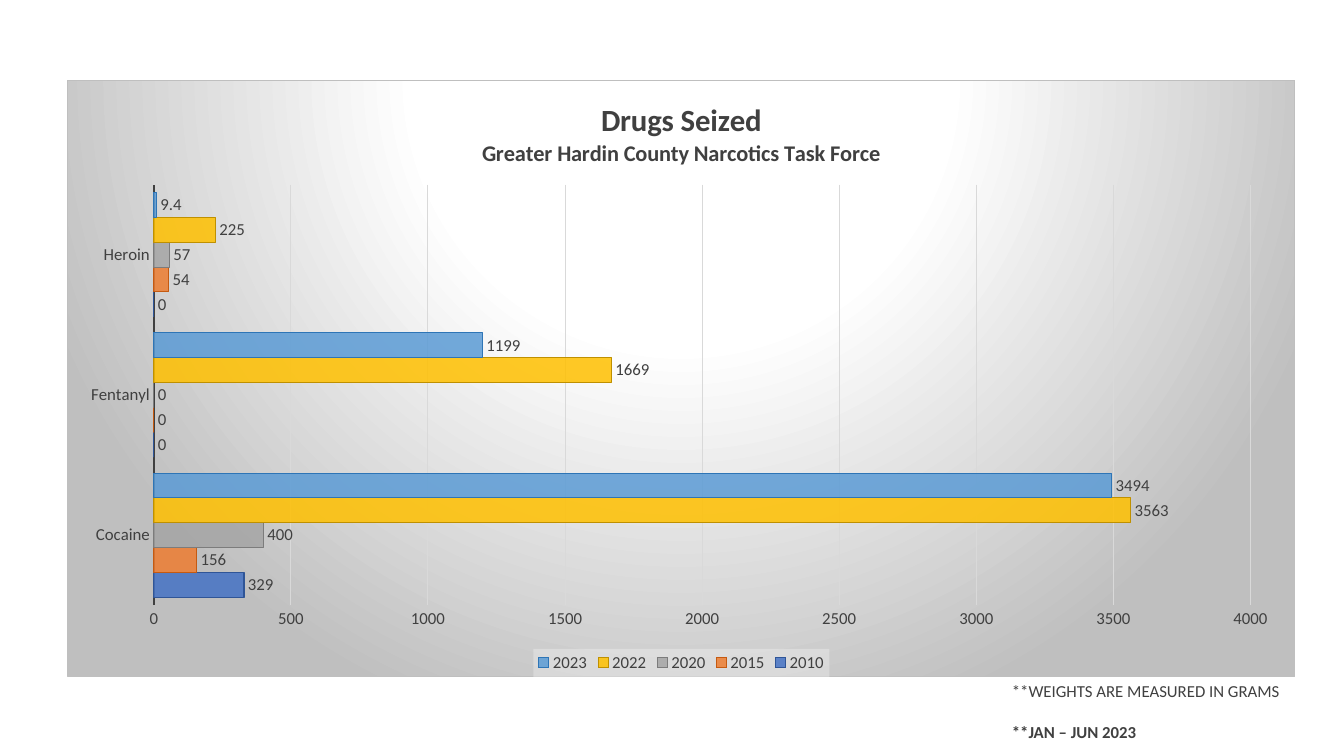
from lxml.etree import fromstring
from pptx import Presentation
from pptx.chart.data import CategoryChartData
from pptx.dml.color import RGBColor
from pptx.enum.chart import XL_CHART_TYPE, XL_LABEL_POSITION, XL_LEGEND_POSITION, XL_TICK_MARK
from pptx.enum.text import MSO_AUTO_SIZE
from pptx.oxml import parse_xml
from pptx.oxml.ns import nsdecls
from pptx.util import Cm, Pt

INK = RGBColor(0x40, 0x40, 0x40)
GRID = RGBColor(0xD9, 0xD9, 0xD9)

DRUGS = ["Cocaine", "Fentanyl", "Heroin"]
# Year, grams seized, bar fill, bar outline
YEARS = [
    ("2010", (329, 0, 0), RGBColor(0x44, 0x72, 0xC4), RGBColor(0x2F, 0x55, 0x97)),
    ("2015", (156, 0, 54), RGBColor(0xED, 0x7D, 0x31), RGBColor(0xC5, 0x5A, 0x11)),
    ("2020", (400, 0, 57), RGBColor(0xA5, 0xA5, 0xA5), RGBColor(0x7C, 0x7C, 0x7C)),
    ("2022", (3563, 1669, 225), RGBColor(0xFF, 0xC0, 0x00), RGBColor(0xBF, 0x90, 0x00)),
    ("2023", (3494, 1199, 9.4), RGBColor(0x5B, 0x9B, 0xD5), RGBColor(0x2E, 0x75, 0xB6)),
]
TITLE = [("Drugs Seized", 22), ("Greater Hardin County Narcotics Task Force", 16)]
NOTES = [("**WEIGHTS ARE MEASURED IN GRAMS", False), ("**JAN – JUN 2023", True)]

NS = nsdecls("c", "a")
BACK = f"""<c:spPr {NS}><a:gradFill><a:gsLst>
<a:gs pos="0"><a:srgbClr val="FFFFFF"/></a:gs>
<a:gs pos="39000"><a:srgbClr val="FFFFFF"/></a:gs>
<a:gs pos="100000"><a:srgbClr val="BFBFBF"/></a:gs></a:gsLst>
<a:path path="circle"><a:fillToRect l="50000" t="-80000" r="50000" b="180000"/></a:path>
</a:gradFill><a:ln w="9525"><a:solidFill><a:srgbClr val="BFBFBF"/></a:solidFill></a:ln></c:spPr>"""
PANEL = f"""<c:spPr {NS}><a:solidFill><a:srgbClr val="F2F2F2"><a:alpha val="39000"/></a:srgbClr>
</a:solidFill></c:spPr>"""
PLOT = f"""<c:layout {NS}><c:manualLayout><c:layoutTarget val="inner"/>
<c:xMode val="edge"/><c:yMode val="edge"/><c:x val="0.07"/><c:y val="0.175"/>
<c:w val="0.894"/><c:h val="0.705"/></c:manualLayout></c:layout>"""


class Deck:
    style = {"name": "Calibri", "size": Pt(12), "bold": False}

    def __init__(self):
        self.prs = Presentation()
        self.prs.slide_width, self.prs.slide_height = Cm(33.87), Cm(19.05)
        self.slide = self.prs.slides.add_slide(self.prs.slide_layouts[6])

    def font(self, font, **more):
        for key, val in {**self.style, **more}.items():
            setattr(font, key, val)
        font.color.rgb = INK

    def line(self, line, color, width):
        line.color.rgb = color
        line.width = Pt(width)

    def bars(self, left, top, width, height):
        data = CategoryChartData()
        data.categories = DRUGS
        for year, grams, *_ in YEARS:
            data.add_series(year, grams)
        chart = self.slide.shapes.add_chart(
            XL_CHART_TYPE.BAR_CLUSTERED, left, top, width, height, data).chart
        self.font(chart.font)
        plot = chart.plots[0]
        plot.gap_width, plot.overlap, plot.vary_by_categories = 65, 0, False
        for bar, (_, _, fill, edge) in zip(plot.series, YEARS):
            self.series(bar, fill, edge)
        # Background and plot area
        chart.font._element.getparent()
        root = chart._chartSpace
        root.find("{*}chart").addnext(parse_xml(BACK))
        area = root.find(".//{*}plotArea")
        for old in area.findall("{*}layout"):
            area.remove(old)
        area.insert(0, parse_xml(PLOT))
        return chart

    def series(self, bar, fill, edge):
        bar.invert_if_negative = False
        bar.format.fill.solid()
        bar.format.fill.fore_color.rgb = fill
        tint = bar._element.find("{*}spPr/{*}solidFill/{*}srgbClr")
        tint.append(parse_xml(f'<a:alpha {NS} val="85000"/>'))
        self.line(bar.format.line, edge, 0.75)
        tags = bar.data_labels
        tags.show_value = True
        tags.position = XL_LABEL_POSITION.OUTSIDE_END
        self.font(tags.font)

    def title(self, chart, lines):
        chart.has_title = True
        frame = chart.chart_title.text_frame
        for i, (text, size) in enumerate(lines):
            para = frame.add_paragraph() if i else frame.paragraphs[0]
            run = para.add_run()
            run.text = text
            self.font(run.font, size=Pt(size), bold=True)

    def axes(self, chart):
        cat, val = chart.category_axis, chart.value_axis
        for axis in (cat, val):
            axis.major_tick_mark = axis.minor_tick_mark = XL_TICK_MARK.NONE
            self.font(axis.tick_labels.font)
        self.line(cat.format.line, INK, 1.5)
        cat.has_major_gridlines = False
        val.format.line.fill.background()
        val.minimum_scale, val.maximum_scale, val.major_unit = 0, 4000, 500
        self.line(val.major_gridlines.format.line, GRID, 0.75)

    def legend(self, chart):
        chart.has_legend = True
        key = chart.legend
        key.position = XL_LEGEND_POSITION.BOTTOM
        key.include_in_layout = False
        self.font(key.font)
        key._element.find("{*}txPr").addprevious(parse_xml(PANEL))

    def text(self, left, top, width, height, lines):
        frame = self.slide.shapes.add_textbox(left, top, width, height).text_frame
        frame.word_wrap = False
        frame.auto_size = MSO_AUTO_SIZE.SHAPE_TO_FIT_TEXT
        for i, (text, bold) in enumerate(lines):
            para = frame.add_paragraph() if i else frame.paragraphs[0]
            para.space_before = Pt(14.6 if i else 0)
            run = para.add_run()
            run.text = text
            self.font(run.font, bold=bold)


def main():
    deck = Deck()
    # Seizure chart
    chart = deck.bars(Cm(1.7), Cm(2.01), Cm(30.94), Cm(15.06))
    deck.title(chart, TITLE)
    deck.axes(chart)
    deck.legend(chart)
    # Footnotes
    deck.text(Cm(25.25), Cm(17.04), Cm(7.34), Cm(1.8), NOTES)
    deck.prs.save("out.pptx")


if __name__ == "__main__":
    main()
